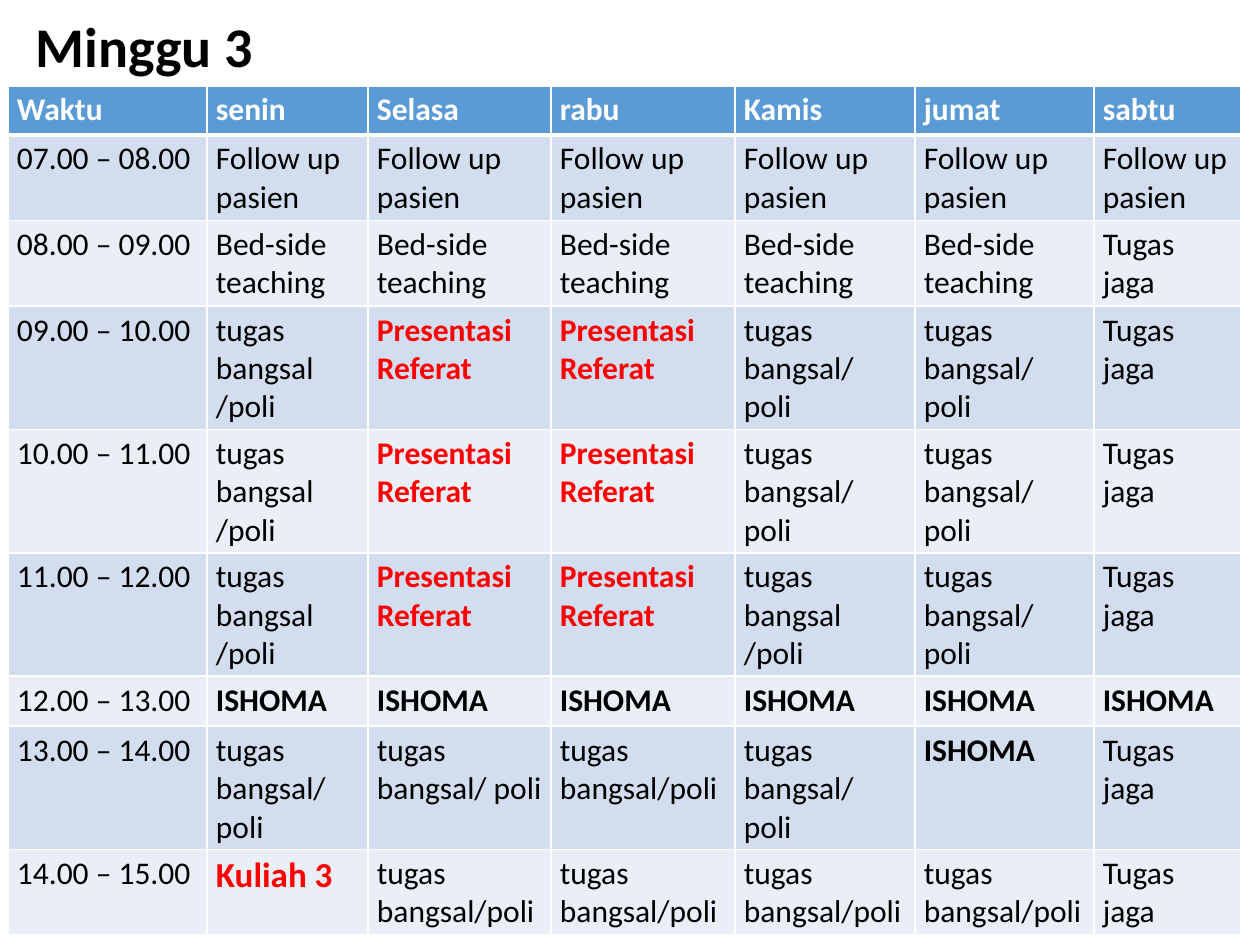
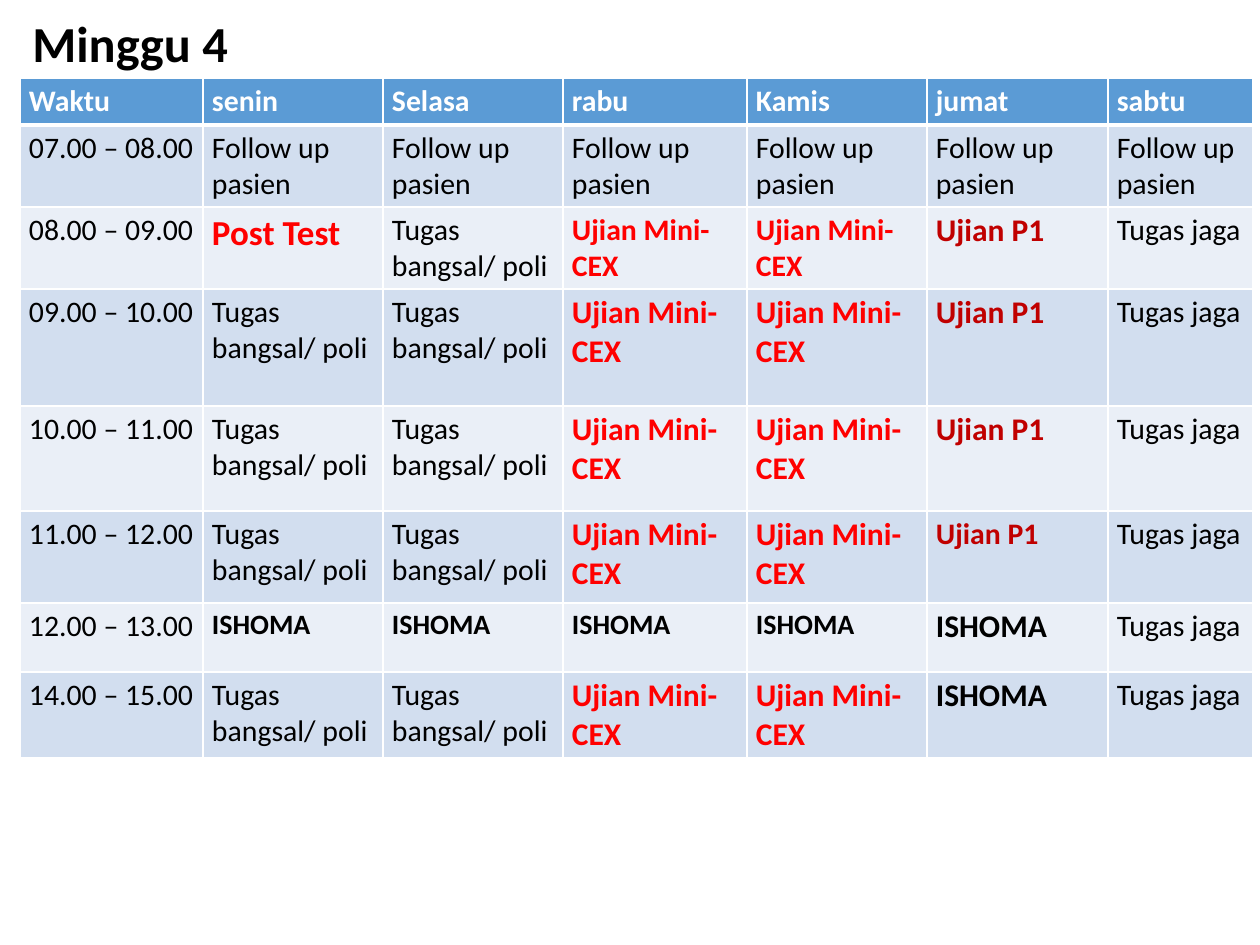
"""Build the weekly timetables for weeks 3 and 4."""
from lxml import etree
from pptx import Presentation
from pptx import util as u
from pptx.dml.color import RGBColor
from pptx.enum import text
from pptx.oxml.ns import qn

PX_PER_INCH = 126
FONT = "Calibri"
WHITE = RGBColor(0xFF, 0xFF, 0xFF)
BLACK = RGBColor(0x00, 0x00, 0x00)
RED = RGBColor(0xFF, 0x00, 0x00)
DARK_RED = RGBColor(0xC0, 0x00, 0x00)
HEADER_BLUE = RGBColor(0x5B, 0x9B, 0xD5)
BANDS = (RGBColor(0xEA, 0xEF, 0xF7), RGBColor(0xD2, 0xDE, 0xEF))

DAYS = ["Waktu", "senin", "Selasa", "rabu", "Kamis", "jumat", "sabtu"]
FOLLOW_UP = "Follow up pasien"
BEDSIDE = "Bed-side teaching"
REFERAT = "Presentasi Referat"
LECTURE = "Kuliah 3"
POST_TEST = "Post Test"
MINI_CEX = "Ujian Mini-CEX"
EXAM = "Ujian P1"
BREAK = "ISHOMA"
DUTY = "Tugas jaga"
WARD = "tugas bangsal/ poli"
WARD_JOINED = "tugas bangsal/poli"
WARD_SPLIT = "tugas bangsal /poli"
WARD_EXAM_WEEK = "Tugas bangsal/ poli"

BOLD_COLORS = {REFERAT: RED, LECTURE: RED, POST_TEST: RED, MINI_CEX: RED,
               EXAM: DARK_RED, BREAK: BLACK}
TEXT_SIZES = {LECTURE: 20, POST_TEST: 20, MINI_CEX: 18, EXAM: 18, BREAK: 18}

REFERAT_HOUR = [WARD_SPLIT, REFERAT, REFERAT, WARD, WARD, DUTY]
WEEK_3 = [
    DAYS,
    ["07.00 – 08.00"] + [FOLLOW_UP] * 6,
    ["08.00 – 09.00"] + [BEDSIDE] * 5 + [DUTY],
    ["09.00 – 10.00"] + REFERAT_HOUR,
    ["10.00 – 11.00"] + REFERAT_HOUR,
    ["11.00 – 12.00", WARD_SPLIT, REFERAT, REFERAT, WARD_SPLIT, WARD, DUTY],
    ["12.00 – 13.00"] + [BREAK] * 6,
    ["13.00 – 14.00", WARD, WARD, WARD_JOINED, WARD, BREAK, DUTY],
    ["14.00 – 15.00", LECTURE] + [WARD_JOINED] * 4 + [DUTY],
]

EXAM_MORNING = [WARD_EXAM_WEEK] * 2 + [MINI_CEX] * 2
EXAM_HOUR = EXAM_MORNING + [EXAM, DUTY]
WEEK_4 = [
    DAYS,
    ["07.00 – 08.00"] + [FOLLOW_UP] * 6,
    ["08.00 – 09.00", POST_TEST] + EXAM_HOUR[1:],
    ["09.00 – 10.00"] + EXAM_HOUR,
    ["10.00 – 11.00"] + EXAM_HOUR,
    ["11.00 – 12.00"] + EXAM_HOUR,
    ["12.00 – 13.00"] + [BREAK] * 5 + [DUTY],
    ["14.00 – 15.00"] + EXAM_MORNING + [BREAK, DUTY],
]
WEEK_4_SIZES = {(2, 3): 17, (2, 4): 17, (5, 5): 17,
                **{(6, column): 16 for column in range(1, 5)}}


def px(length):
    return u.Emu(round(length * u.Inches(1) / PX_PER_INCH))


def style_paragraph(para, size, color, bold):
    for span in para.runs:
        span.font.name = FONT
        span.font.size = u.Pt(size)
        span.font.bold = bold
        span.font.color.rgb = color


def add_title(page, words, frame, size):
    box = page.shapes.add_textbox(*map(px, frame))
    box.text_frame.word_wrap = True
    box.text_frame.vertical_anchor = text.MSO_ANCHOR.MIDDLE
    para = box.text_frame.paragraphs[0]
    para.text = words
    para.line_spacing = 0.9
    style_paragraph(para, size, BLACK, True)


def set_borders(cell, widths):
    properties = cell._tc.get_or_add_tcPr()
    for side, points in widths.items():
        line = etree.SubElement(properties, qn(f"a:ln{side}"), w=str(u.Pt(points)))
        fill = etree.SubElement(line, qn("a:solidFill"))
        etree.SubElement(fill, qn("a:srgbClr"), val=str(WHITE))


def fill_cell(cell, words, row, size):
    header = row == 0
    cell.margin_left = cell.margin_right = px(9)
    cell.margin_top = cell.margin_bottom = px(5)
    set_borders(cell, {"L": 1, "R": 1, "T": 3 if row == 1 else 1, "B": 3 if header else 1})
    cell.fill.solid()
    cell.fill.fore_color.rgb = HEADER_BLUE if header else BANDS[row % 2]
    cell.text_frame.text = words
    color = WHITE if header else BOLD_COLORS.get(words, BLACK)
    style_paragraph(cell.text_frame.paragraphs[0], size, color,
                    header or words in BOLD_COLORS)


def add_timetable(page, schedule, frame, widths, heights, base_size, sizes):
    graphic = page.shapes.add_table(len(schedule), len(DAYS), *map(px, frame))
    table = graphic.table
    for column, width in zip(table.columns, widths):
        column.width = px(width)
    for row, height in zip(table.rows, heights):
        row.height = px(height)
    graphic.height = px(frame[3])
    for row, entries in enumerate(schedule):
        for column, words in enumerate(entries):
            size = sizes.get((row, column), TEXT_SIZES.get(words, base_size))
            fill_cell(table.cell(row, column), words, row, size)


def main():
    deck = Presentation()
    deck.slide_width, deck.slide_height = px(1260), px(945)
    blank = deck.slide_layouts[6]

    page = deck.slides.add_slide(blank)
    add_title(page, "Minggu 3", (23, 30, 1086, 39), 32)
    add_timetable(page, WEEK_3, (8, 86, 1233, 845),
                  [199, 161, 183, 184, 180, 179, 147],
                  [49] + [84] * 5 + [50, 49, 49], 18, {})

    page = deck.slides.add_slide(blank)
    add_title(page, "Minggu 4", (20, 14, 1086, 64), 28.8)
    add_timetable(page, WEEK_4, (20, 78, 1233, 678),
                  [183, 180, 180, 184, 180, 181, 145],
                  [47, 82, 82, 117, 105, 92, 69, 82], 17, WEEK_4_SIZES)

    deck.save("out.pptx")


if __name__ == "__main__":
    main()
